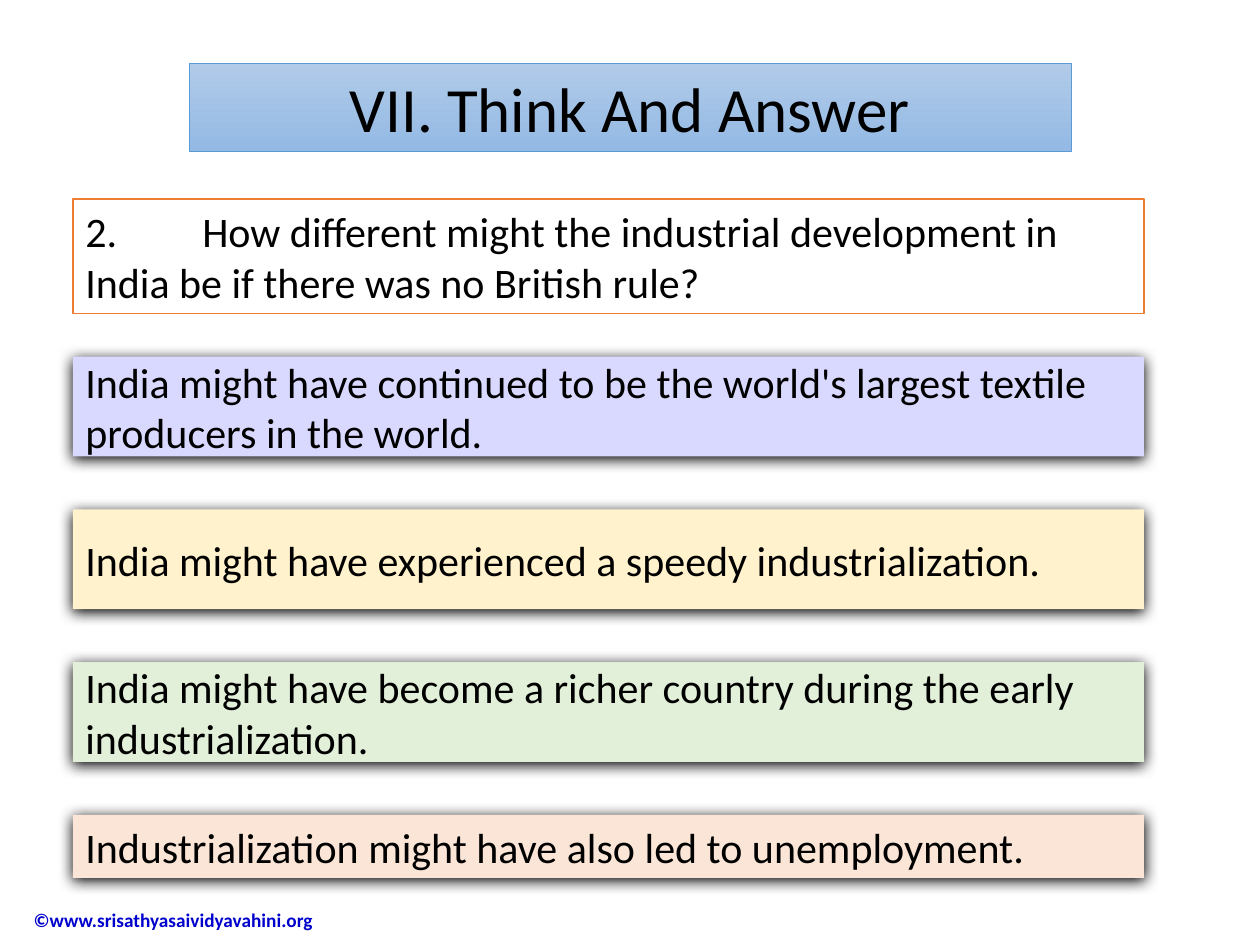
import pptx
import pptx.dml.color
import pptx.enum.shapes
import pptx.enum.text
import pptx.oxml
import pptx.oxml.ns
import pptx.util
from pptx.util import Cm

COLOURS = {
    "text": "000000",
    "question fill": "FFFFFF",
    "question line": "ED7D31",
    "title top": "B1CBE9",
    "title bottom": "93B9E4",
    "title line": "5B9BD5",
    "credit": "0000CC",
    "lilac": "D9D9FF",
    "cream": "FFF2CC",
    "green": "E2F0D9",
    "peach": "FBE5D6",
}
SHADOW = (
    '<a:effectLst %s><a:outerShdw blurRad="107950" dist="12700" dir="5400000" '
    'algn="ctr" rotWithShape="0"><a:srgbClr val="000000"/></a:outerShdw></a:effectLst>'
    % pptx.oxml.ns.nsdecls("a")
)
TABS = '<a:tabLst %s><a:tab pos="%d" algn="l"/></a:tabLst>'

LEFT, WIDTH = 1.47, 21.59
ANSWER_TOP, ANSWER_PITCH = 7.19, 3.08
ANSWERS = [
    ("India might have continued to be the world's largest textile producers in the world.",
     "lilac", 2.01, 0.25),
    ("India might have experienced a speedy industrialization.", "cream", 2.01, 0.25),
    ("India might have become a richer country during the early industrialization.",
     "green", 2.01, 0.25),
    ("Industrialization might have also led to unemployment.", "peach", 1.27, 0.13),
]


def colour(name):
    return pptx.dml.color.RGBColor.from_string(COLOURS[name])


class SlideBuilder:
    font = "Calibri"

    def __init__(self, slide):
        self.slide = slide

    def set_text(self, shape, text, size, ink="text", bold=False, centred=False,
                 inset=0.13, tab=None):
        frame = shape.text_frame
        frame.word_wrap = True
        frame.auto_size = pptx.enum.text.MSO_AUTO_SIZE.NONE
        frame.vertical_anchor = pptx.enum.text.MSO_ANCHOR.MIDDLE
        frame.margin_left = frame.margin_right = Cm(0.25)
        frame.margin_top = frame.margin_bottom = Cm(inset)
        para = frame.paragraphs[0]
        para.text = text
        align = pptx.enum.text.PP_ALIGN
        para.alignment = align.CENTER if centred else align.LEFT
        if tab:
            tabs = TABS % (pptx.oxml.ns.nsdecls("a"), Cm(tab))
            para._p.get_or_add_pPr().append(pptx.oxml.parse_xml(tabs))
        para.font.name = self.font
        para.font.size = pptx.util.Pt(size)
        para.font.bold = bold
        para.font.color.rgb = colour(ink)

    def title(self, text, left, top, width, height):
        title = self.slide.shapes.title
        title.left, title.top = Cm(left), Cm(top)
        title.width, title.height = Cm(width), Cm(height)
        title.fill.gradient()
        title.fill.gradient_angle = 270
        stop_colours = ("title top", "title bottom")
        for position, stop in enumerate(title.fill.gradient_stops):
            stop.position = position
            stop.color.rgb = colour(stop_colours[position])
        title.line.color.rgb = colour("title line")
        title.line.width = pptx.util.Pt(0.5)
        self.set_text(title, text, 36, centred=True)

    def rectangle(self, top, height, fill):
        box = self.slide.shapes.add_shape(
            pptx.enum.shapes.MSO_SHAPE.RECTANGLE, Cm(LEFT), Cm(top), Cm(WIDTH), Cm(height))
        box.shadow.inherit = False
        box.fill.solid()
        box.fill.fore_color.rgb = colour(fill)
        return box

    def question(self, text, top, height):
        box = self.rectangle(top, height, "question fill")
        box.line.color.rgb = colour("question line")
        box.line.width = pptx.util.Pt(1)
        self.set_text(box, text, 24, tab=2.36)

    def answer(self, text, top, height, fill, inset):
        box = self.rectangle(top, height, fill)
        box.line.fill.background()
        properties = box._element.spPr
        properties.remove(properties.find(pptx.oxml.ns.qn("a:effectLst")))
        properties.append(pptx.oxml.parse_xml(SHADOW))
        self.set_text(box, text, 24, inset=inset)

    def credit(self, text, left, top, width, height):
        box = self.slide.shapes.add_textbox(Cm(left), Cm(top), Cm(width), Cm(height))
        self.set_text(box, text, 11, ink="credit", bold=True)


def main():
    deck = pptx.Presentation()
    deck.slide_width, deck.slide_height = Cm(25.4), Cm(19.05)
    title_only = deck.slide_layouts[5]
    page = SlideBuilder(deck.slides.add_slide(title_only))
    page.credit("©www.srisathyasaividyavahini.org", 0.43, 18.03, 6.4, 1.04)
    page.title("VII. Think And Answer", 3.81, 1.27, 17.78, 1.78)
    page.question("2.\tHow different might the industrial development in India be "
                  "if there was no British rule?", 4.01, 2.31)
    for row, (text, fill, height, inset) in enumerate(ANSWERS):
        page.answer(text, ANSWER_TOP + row * ANSWER_PITCH, height, fill, inset)
    deck.save("out.pptx")


if __name__ == "__main__":
    main()
